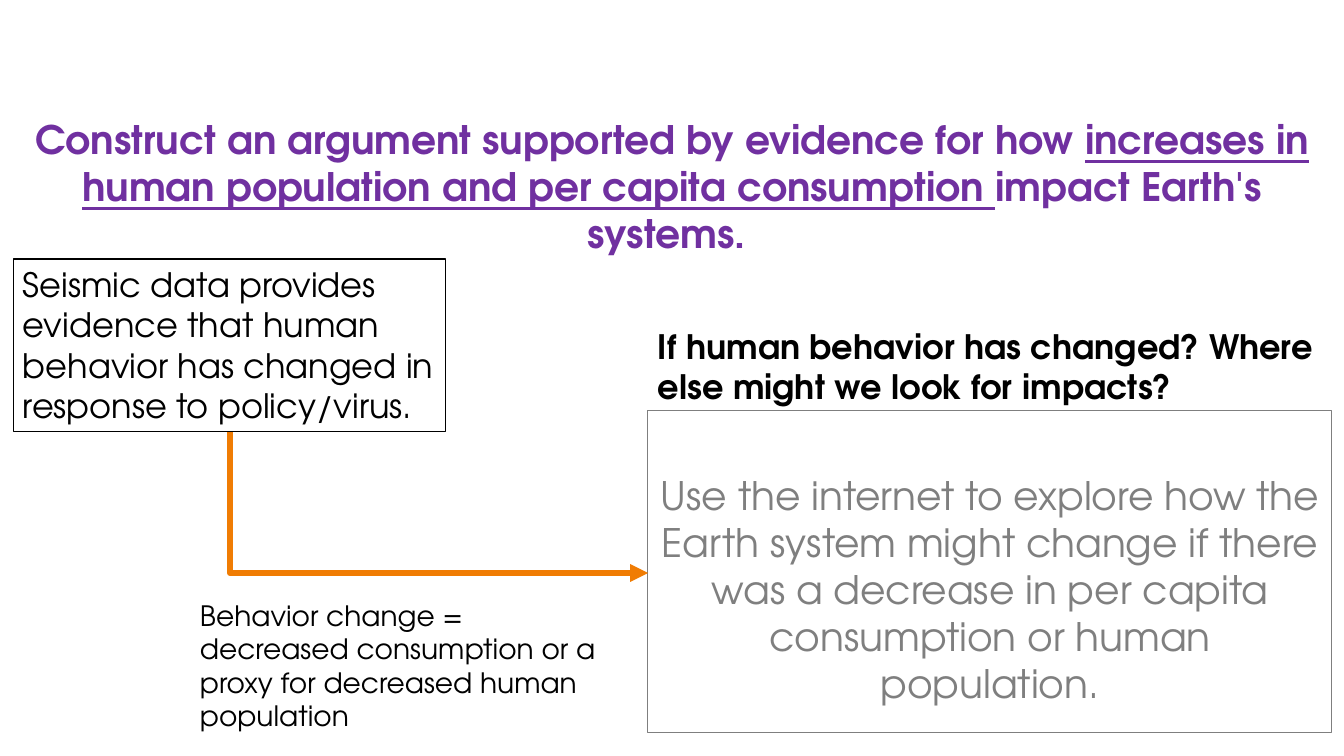
from lxml import etree
from pptx import Presentation
from pptx import util as u
from pptx.dml.color import RGBColor
from pptx.enum import shapes, text
from pptx.oxml.ns import qn

FONT = "TeX Gyre Adventor"
PURPLE, GRAY, BLACK, ORANGE = "7030A0", "7F7F7F", "000000", "F07C03"
LEFT, MID = text.PP_ALIGN.LEFT, text.PP_ALIGN.CENTER
TOP, LOW = text.MSO_ANCHOR.TOP, text.MSO_ANCHOR.BOTTOM

# Content: place in px, runs (words, underlined), look
BOXES = [
    dict(at=(0, 139, 1344, 122), size=28, color=PURPLE, bold=True,
         align=MID, anchor=LOW, runs=[
             ("Construct an argument supported by evidence for how ", False),
             ("increases in human population and per capita consumption ", True),
             ("impact Earth's systems. ", False)]),
    dict(at=(648, 411, 684, 322), size=28, color=GRAY, align=MID,
         line=GRAY, inset=60, runs=[
             ("Use the internet to explore how the Earth system might change "
              "if there was a decrease in per capita consumption or human "
              "population.", False)]),
    dict(at=(13, 259, 433, 173), size=24, line=BLACK, runs=[
        ("Seismic data provides evidence that human behavior has changed in "
         "response to policy/virus.", False)]),
    dict(at=(648, 321, 684, 92), size=24, bold=True, runs=[
        ("If human behavior has changed? Where else might we look for "
         "impacts?", False)]),
    dict(at=(190, 593, 426, 146), size=20, runs=[
        ("Behavior change = decreased consumption or a proxy for decreased "
         "human population", False)]),
]
ARROW = ((230, 432), (648, 573))


def px(n):
    return u.Emu(round(n * 914400 / 100.8))


def rgb(hue):
    return RGBColor.from_string(hue)


def add_box(slide, at, size, runs, color=BLACK, bold=False, align=LEFT,
            anchor=TOP, line=None, inset=5):
    place = [px(n) for n in at]
    if line:
        box = slide.shapes.add_shape(shapes.MSO_SHAPE.RECTANGLE, *place)
        box.shadow.inherit = False
        box.fill.background()
        box.line.color.rgb = rgb(line)
        box.line.width = u.Pt(0.75)
    else:
        box = slide.shapes.add_textbox(*place)
    frame = box.text_frame
    form = dict(word_wrap=True, vertical_anchor=anchor, margin_top=px(inset))
    for key, val in form.items():
        setattr(frame, key, val)
    para = frame.paragraphs[0]
    para.alignment = align
    for words, under in runs:
        run = para.add_run()
        run.text = words
        look = dict(name=FONT, size=u.Pt(size), bold=bold, underline=under)
        for key, val in look.items():
            setattr(run.font, key, val)
        run.font.color.rgb = rgb(color)


def add_bend(slide, start, end):
    # Down, then right: a one-corner elbow turned by 270 degrees
    (x1, y1), (x2, y2) = start, end
    cx, cy = (x1 + x2) / 2, (y1 + y2) / 2
    dx, dy = (y2 - y1) / 2, (x2 - x1) / 2
    bend = slide.shapes.add_connector(
        shapes.MSO_CONNECTOR.ELBOW,
        px(cx + dx), px(cy - dy), px(cx - dx), px(cy + dy))
    bend.line.color.rgb = rgb(ORANGE)
    bend.line.width = u.Pt(4.25)
    props = bend._element.spPr
    props.find(qn("a:xfrm")).set("rot", str(270 * 60000))
    props.find(qn("a:prstGeom")).set("prst", "bentConnector2")
    tip = etree.SubElement(props.find(qn("a:ln")), qn("a:tailEnd"))
    tip.set("type", "triangle")
    etree.SubElement(props, qn("a:effectLst"))


def main():
    deck = Presentation()
    deck.slide_width, deck.slide_height = px(1344), px(756)
    slide = deck.slides.add_slide(deck.slide_layouts[6])
    for box in BOXES:
        add_box(slide, **box)
    add_bend(slide, *ARROW)
    deck.save("out.pptx")


if __name__ == "__main__":
    main()
